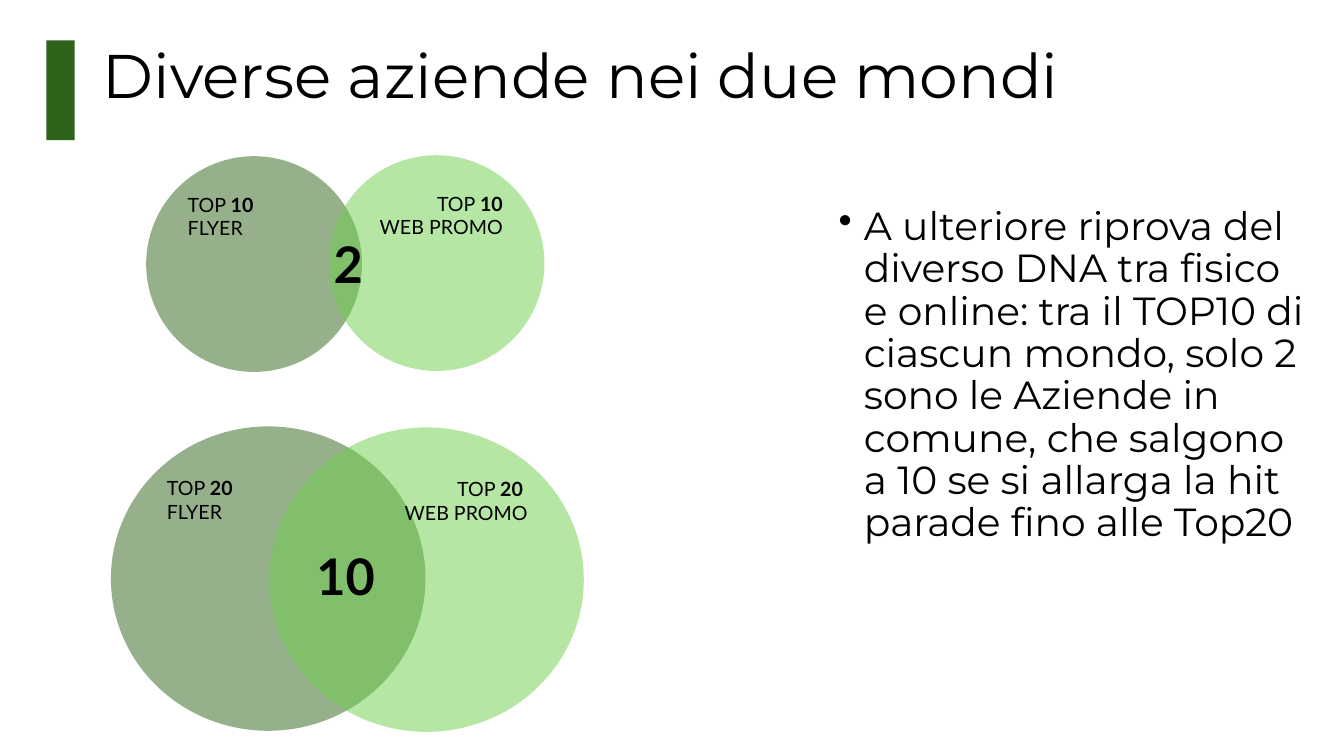
import pptx
import pptx.util
import pptx.dml.color
import pptx.enum.shapes
import pptx.enum.text
import pptx.oxml
import pptx.oxml.ns

KIND = pptx.enum.shapes.MSO_SHAPE
ALIGN = pptx.enum.text.PP_ALIGN
CELL = 0.1
DARK, LIGHT, INK = "2E631B", "6DCE4A", "000000"
HEAD, BODY = "Montserrat", "Lato"


def tint(code):
    return pptx.dml.color.RGBColor.from_string(code)


def write(shape, lines, size, font=BODY, align=ALIGN.LEFT, space=1.0, bullet=False):
    frame = shape.text_frame
    frame.word_wrap = True
    frame.vertical_anchor = pptx.enum.text.MSO_ANCHOR.TOP
    for row, line in enumerate(lines):
        para = frame.add_paragraph() if row else frame.paragraphs[0]
        para.alignment = align
        para.line_spacing = space
        if bullet:
            props = para._p.get_or_add_pPr()
            inch = pptx.util.Inches(0.25)
            props.set("marL", str(inch))
            props.set("indent", str(-inch))
            mark = pptx.oxml.parse_xml(
                f'<a:buChar {pptx.oxml.ns.nsdecls("a")} char="•"/>')
            props.append(mark)
        for text, bold in line:
            run = para.add_run()
            run.text = text
            run.font.name = font
            run.font.size = pptx.util.Pt(size)
            run.font.bold = bold
            run.font.color.rgb = tint(INK)


class Deck:
    """Draws styled elements on one slide, in grid cells of a tenth of an inch."""

    def __init__(self):
        self.show = pptx.Presentation()
        self.show.slide_width = pptx.util.Inches(13.33)
        self.show.slide_height = pptx.util.Inches(7.5)
        self.slide = self.show.slides.add_slide(self.show.slide_layouts[6])

    def place(self, *cells):
        return [pptx.util.Inches(cell * CELL) for cell in cells]

    def shape(self, kind, box, fill, alpha=None):
        shape = self.slide.shapes.add_shape(kind, *self.place(*box))
        shape.shadow.inherit = False
        shape.line.fill.background()
        shape.fill.solid()
        shape.fill.fore_color.rgb = tint(fill)
        if alpha:
            color = shape._element.spPr.find(".//" + pptx.oxml.ns.qn("a:srgbClr"))
            color.append(pptx.oxml.parse_xml(
                f'<a:alpha {pptx.oxml.ns.nsdecls("a")} val="{alpha * 1000}"/>'))
        return shape

    def text(self, box, text, size, bold=False, **style):
        frame = self.slide.shapes.add_textbox(*self.place(*box))
        write(frame, [[(text, bold)]], size, **style)

    def venn(self, top, flyer, web, size, common, box):
        sides = (
            (flyer, DARK, f"{top}", "FLYER", ALIGN.LEFT),
            (web, LIGHT, f"{top} " if top == 20 else f"{top}", "WEB PROMO", ALIGN.RIGHT),
        )
        for spot, fill, count, name, align in sides:
            disc = self.shape(KIND.OVAL, spot + size, fill, alpha=50)
            lines = [[("TOP ", False), (count, True)], [(name, False)]]
            write(disc, lines, 14, align=align)
        self.text(box, common, 36, bold=True)


def main():
    deck = Deck()
    deck.shape(KIND.RECTANGLE, (4.6, 4, 2.8, 9.9), DARK)
    deck.text((9.2, 4, 115, 14.5), "Diverse aziende nei due mondi", 44,
              font=HEAD, space=0.9)
    deck.text((82.2, 20, 48.8, 47.6),
              "A ulteriore riprova del diverso DNA tra fisico e online: tra il "
              "TOP10 di ciascun mondo, solo 2 sono le Aziende in comune, che "
              "salgono a 10 se si allarga la hit parade fino alle Top20",
              28, font=HEAD, space=0.9, bullet=True)
    deck.venn(10, (14.5, 15.5), (32.6, 15.4), (21.4, 21.4), "2",
              (32.1, 22.6, 3.8, 7.1))
    deck.venn(20, (11, 42.3), (26.7, 42.4), (31.2, 30.2), "10",
              (30.4, 53.6, 8.5, 7.1))
    deck.show.save("out.pptx")


if __name__ == "__main__":
    main()
